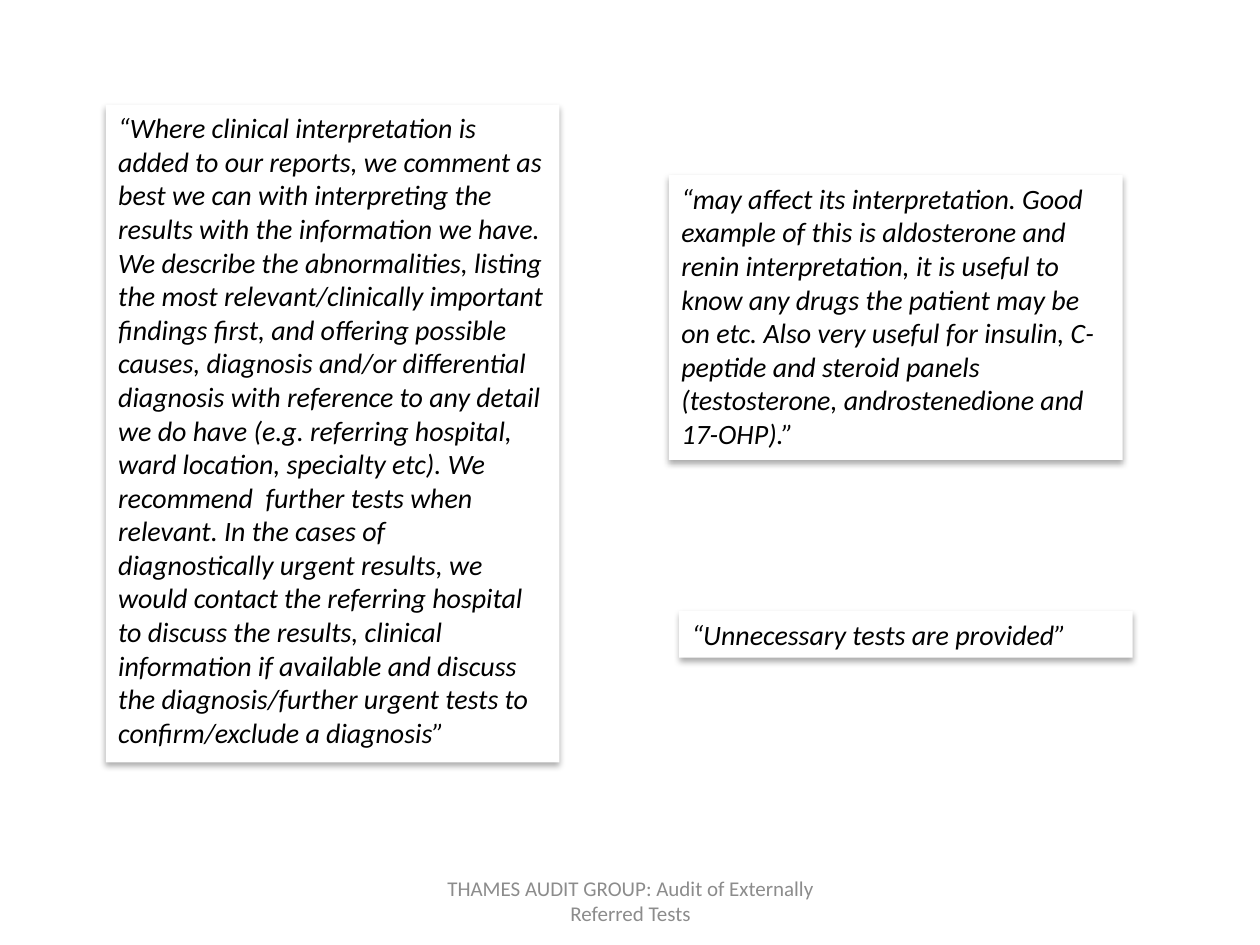
from lxml.etree import SubElement
from pptx import Presentation
from pptx.dml.color import RGBColor
from pptx.enum.shapes import MSO_SHAPE
from pptx.enum.text import MSO_ANCHOR, MSO_AUTO_SIZE, PP_ALIGN
from pptx.oxml.ns import qn
from pptx.util import Inches, Pt

QUOTES = [
    (0.84, 0.83, 5.22,
     "“Where clinical interpretation is added to our reports, we comment as best "
     "we can with interpreting the results with the information we have. We "
     "describe the abnormalities, listing the most relevant/clinically important "
     "findings first, and offering possible causes, diagnosis and/or differential "
     "diagnosis with reference to any detail we do have (e.g. referring hospital, "
     "ward location, specialty etc). We recommend  further tests when relevant. "
     "In the cases of diagnostically urgent results, we would contact the "
     "referring hospital to discuss the results, clinical information if available "
     "and discuss the diagnosis/further urgent tests to confirm/exclude a diagnosis”"),
    (5.31, 1.39, 2.26,
     "“may affect its interpretation. Good example of this is aldosterone and "
     "renin interpretation, it is useful to know any drugs the patient may be on "
     "etc. Also very useful for insulin, C-peptide and steroid panels "
     "(testosterone, androstenedione and 17-OHP).”"),
    (5.39, 4.85, 0.37, "“Unnecessary tests are provided”"),
]
FOOTER = "THAMES AUDIT GROUP: Audit of Externally Referred Tests"
WIDTH = 3.6


class Theme:
    font = "Calibri"
    ink = RGBColor(0, 0, 0)
    gray = RGBColor(0x8C, 0x8C, 0x8C)
    card = RGBColor(0xFF, 0xFF, 0xFF)
    quote = Pt(16)
    foot = Pt(12)


def write(shape, text, size, color, align, italic=False):
    frame = shape.text_frame
    frame.word_wrap = True
    para = frame.paragraphs[0]
    para.text = text
    para.alignment = align
    font = para.font
    font.name, font.size, font.italic = Theme.font, size, italic
    font.color.rgb = color
    return frame


def shade(shape):
    shape.shadow.inherit = False
    effects = shape._element.spPr.find(qn("a:effectLst"))
    outer = SubElement(effects, qn("a:outerShdw"), blurRad=str(Pt(3.5)),
                       dist=str(Pt(2.2)), dir="5400000", rotWithShape="0")
    color = SubElement(outer, qn("a:srgbClr"), val=str(Theme.ink))
    SubElement(color, qn("a:alpha"), val="32000")


def add_quote(slide, left, top, height, text):
    card = slide.shapes.add_shape(
        MSO_SHAPE.RECTANGLE, *map(Inches, (left, top, WIDTH, height)))
    card.fill.solid()
    card.fill.fore_color.rgb = Theme.card
    card.line.fill.background()
    shade(card)
    frame = write(card, text, Theme.quote, Theme.ink, PP_ALIGN.LEFT, True)
    frame.vertical_anchor = MSO_ANCHOR.TOP
    frame.auto_size = MSO_AUTO_SIZE.SHAPE_TO_FIT_TEXT


def main():
    deck = Presentation()
    deck.slide_width, deck.slide_height = Inches(10), Inches(7.5)
    slide = deck.slides.add_slide(deck.slide_layouts[6])
    foot = slide.shapes.add_textbox(*map(Inches, (3.42, 6.95, 3.17, 0.4)))
    frame = write(foot, FOOTER, Theme.foot, Theme.gray, PP_ALIGN.CENTER)
    frame.vertical_anchor = MSO_ANCHOR.MIDDLE
    for quote in QUOTES:
        add_quote(slide, *quote)
    deck.save("out.pptx")


if __name__ == "__main__":
    main()
